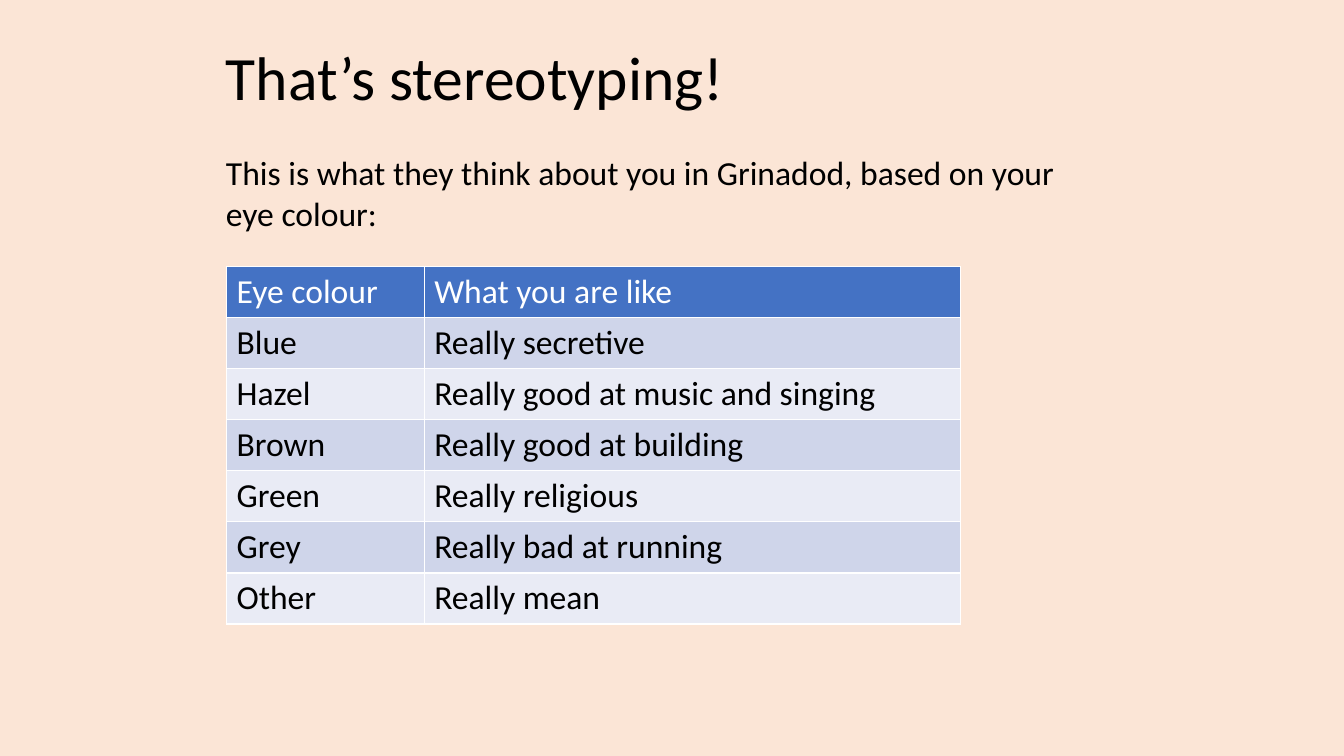
import lxml.etree
import pptx
import pptx.dml.color
import pptx.enum.text
import pptx.oxml.ns
import pptx.util

Cm = pptx.util.Cm
Pt = pptx.util.Pt
RGBColor = pptx.dml.color.RGBColor
qn = pptx.oxml.ns.qn

PEACH = RGBColor(0xFB, 0xE5, 0xD6)
BLACK = RGBColor(0, 0, 0)
WHITE = RGBColor(0xFF, 0xFF, 0xFF)
HEADER_BLUE = RGBColor(0x44, 0x72, 0xC4)
BAND_DARK = RGBColor(0xCF, 0xD5, 0xEA)
BAND_LIGHT = RGBColor(0xE9, 0xEB, 0xF5)
FONT = "Calibri"

STEREOTYPES = [
    ("Eye colour", "What you are like"),
    ("Blue", "Really secretive"),
    ("Hazel", "Really good at music and singing"),
    ("Brown", "Really good at building"),
    ("Green", "Really religious"),
    ("Grey", "Really bad at running"),
    ("Other", "Really mean"),
]


def add_span(para, text, size, color):
    """Add one formatted run to a paragraph."""
    span = para.add_run()
    span.text = text
    span.font.name = FONT
    span.font.size = Pt(size)
    span.font.bold = False
    span.font.color.rgb = color


def fill_placeholder(holder, box, text, size, anchor, after):
    """Place a placeholder in its box and write one plain left-aligned paragraph."""
    holder.left, holder.top, holder.width, holder.height = box
    frame = holder.text_frame
    frame.word_wrap = True
    frame.auto_size = pptx.enum.text.MSO_AUTO_SIZE.NONE
    frame.vertical_anchor = anchor
    para = frame.paragraphs[0]
    para.alignment = pptx.enum.text.PP_ALIGN.LEFT
    para.space_before = Pt(0)
    para.space_after = Pt(after)
    add_span(para, text, size, color=BLACK)
    properties = para._p.get_or_add_pPr()
    properties.set("marL", "0")
    properties.set("indent", "0")
    lxml.etree.SubElement(properties, qn("a:buNone"))


def add_borders(cell, color, width):
    """Draw the same line on all four sides of a cell."""
    properties = cell._tc.get_or_add_tcPr()
    for index, side in enumerate(("a:lnL", "a:lnR", "a:lnT", "a:lnB")):
        line = lxml.etree.Element(qn(side), w=str(Pt(width)))
        solid = lxml.etree.SubElement(line, qn("a:solidFill"))
        lxml.etree.SubElement(solid, qn("a:srgbClr"), val=str(color))
        properties.insert(index, line)


def add_stereotype_table(page, box, first_width):
    """Add the banded eye colour table, filling its box with equal rows."""
    left, top, width, height = box
    table = page.shapes.add_table(len(STEREOTYPES), 2, left, top, width, height).table
    table.columns[0].width = first_width
    table.columns[1].width = width - first_width
    for row, texts in enumerate(STEREOTYPES):
        band = BAND_DARK if row % 2 else BAND_LIGHT
        for column, text in enumerate(texts):
            cell = table.cell(row, column)
            cell.fill.solid()
            cell.fill.fore_color.rgb = band if row else HEADER_BLUE
            add_borders(cell, WHITE, 1)
            add_span(cell.text_frame.paragraphs[0], text, 24, BLACK if row else WHITE)


def build_stereotype_page(deck):
    """Add the page with its title, introduction and table."""
    page = deck.slides.add_slide(deck.slide_layouts[1])
    page.background.fill.solid()
    page.background.fill.fore_color.rgb = PEACH
    anchor = pptx.enum.text.MSO_ANCHOR
    left = Cm(5.44)
    fill_placeholder(page.shapes.title, (left, Cm(0.76), Cm(22.86), Cm(2.31)),
                     "That’s stereotyping!", 44, anchor.MIDDLE, 20)
    fill_placeholder(page.placeholders[1], (left, Cm(3.71), Cm(21.69), Cm(2.31)),
                     "This is what they think about you in Grinadod, "
                     "based on your eye colour:", 24, anchor.TOP, 5)
    add_stereotype_table(page, (Cm(5.71), Cm(6.71), Cm(18.49), Cm(9)), Cm(4.98))


def main():
    """Build and save the deck."""
    deck = pptx.Presentation()
    deck.slide_width = Cm(33.87)
    deck.slide_height = Cm(19.05)
    build_stereotype_page(deck)
    deck.save("out.pptx")


if __name__ == "__main__":
    main()
